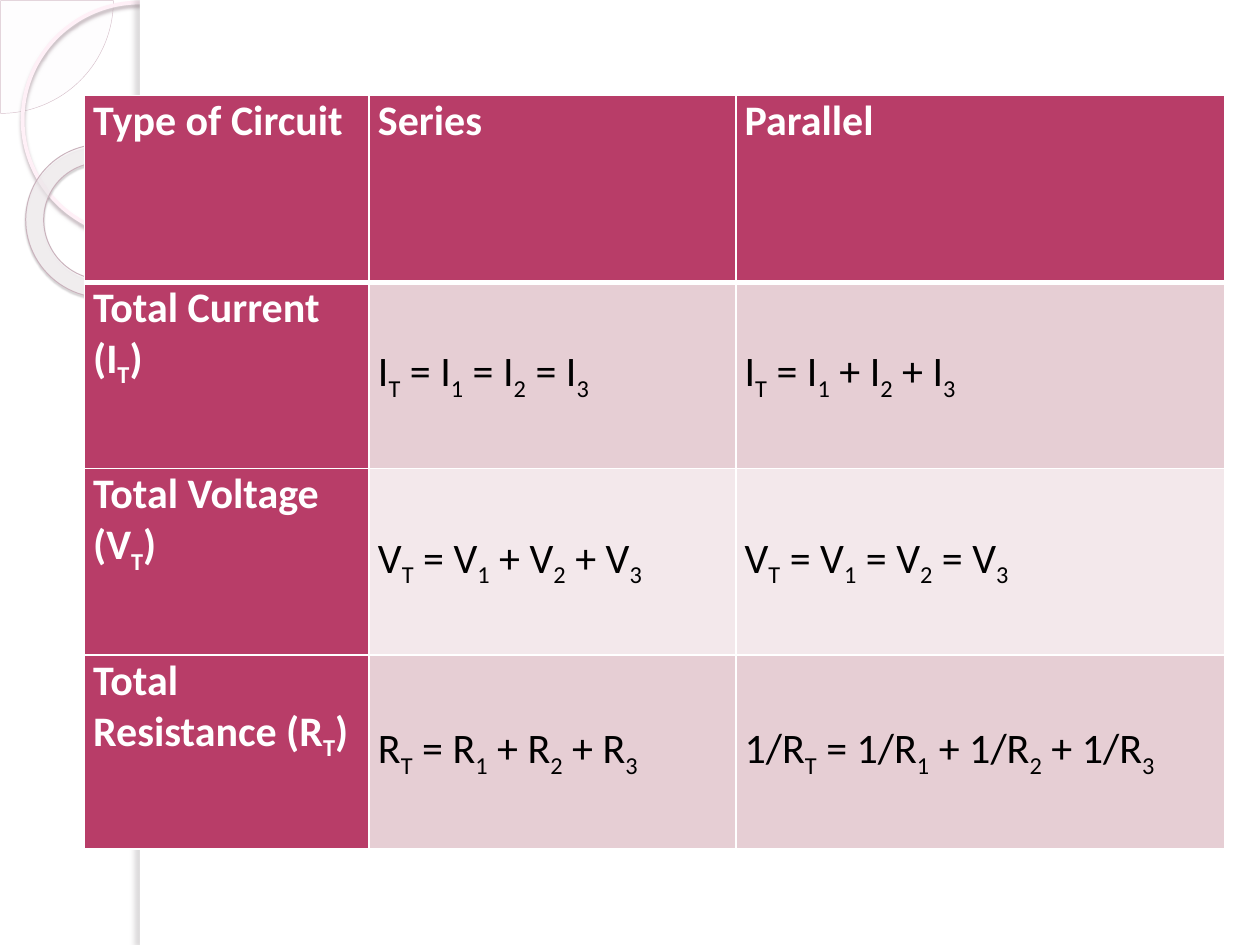
from lxml import etree
from pptx import Presentation
from pptx import util as u
from pptx.dml.color import RGBColor
from pptx.enum import shapes, text
from pptx.oxml.ns import qn

COLORS = {
    "white": "FFFFFF", "black": "000000", "berry": "B83D68",
    "rose": "E6CED4", "blush": "F3E8EB", "petal": "FEFAFC",
    "pie edge": "D7C0CB", "ring edge": "FFF0F7", "donut edge": "CAB3BD",
    "ring shade": "B7A8AF", "donut shade": "5C5257", "panel shade": "7A7276",
}
SLIDE_W, SLIDE_H = 10, 7.5
PANEL_LEFT = 1.11

# An underscore lowers the one character after it.
CIRCUITS = [
    ("Type of Circuit", "Series", "Parallel"),
    ("Total Current (I_T)", "I_T = I_1 = I_2 = I_3", "I_T = I_1 + I_2 + I_3"),
    ("Total Voltage (V_T)", "V_T = V_1 + V_2 + V_3", "V_T = V_1 = V_2 = V_3"),
    ("Total Resistance (R_T)", "R_T = R_1 + R_2 + R_3",
     "1/R_T = 1/R_1 + 1/R_2 + 1/R_3"),
]
TABLE_LEFT, TABLE_TOP = 0.67, 0.76
COL_WIDTHS = (2.26, 2.91, 3.88)
ROW_HEIGHTS = (1.48, 1.48, 1.48, 1.54)

KIND = shapes.MSO_SHAPE
# shadow: colour, opacity %, blur pt, distance pt, direction in degrees
DECORATIONS = [
    dict(kind=KIND.PIE, box=(-0.89, -0.89, 1.79, 1.79), adjust=(0, 54),
         fill="petal", opacity=33, line=("pie edge", 0.25)),
    dict(kind=KIND.OVAL, box=(0.18, 0.02, 1.86, 1.86),
         line=("ring edge", 2.15), shadow=("ring shade", 85, 2, 2, 90)),
    dict(kind=KIND.DONUT, box=(0.2, 1.15, 1.23, 1.21), adjust=(0.118,),
         turn=38.6, fill="petal", opacity=60, line=("donut edge", 0.58),
         shadow=("donut shade", 35, 1, 1.2, 75)),
    dict(kind=KIND.RECTANGLE, fill="white",
         box=(PANEL_LEFT, 0, SLIDE_W - PANEL_LEFT, SLIDE_H)),
    dict(kind=KIND.RECTANGLE, fill="white", box=(PANEL_LEFT, 0, 0.08, SLIDE_H),
         shadow=("panel shade", 25, 3, 3, 180)),
]


def rgb(name):
    return RGBColor.from_string(COLORS[name])


def set_opacity(color, percent):
    etree.SubElement(color, qn("a:alpha"), val=str(round(percent * 1000)))


def cast_shadow(shape, color, opacity, blur, distance, direction):
    effects = shape._element.spPr.find(qn("a:effectLst"))
    outer = etree.SubElement(
        effects, qn("a:outerShdw"), blurRad=str(u.Pt(blur)),
        dist=str(u.Pt(distance)), dir=str(direction * 60000),
        algn="tl", rotWithShape="0")
    set_opacity(etree.SubElement(outer, qn("a:srgbClr"), val=COLORS[color]), opacity)


def add_decoration(slide, kind, box, adjust=(), turn=0, fill=None,
                   opacity=100, line=None, shadow=None):
    shape = slide.shapes.add_shape(kind, *map(u.Inches, box))
    shape.rotation = turn
    for i, value in enumerate(adjust):
        shape.adjustments[i] = value
    if fill:
        shape.fill.solid()
        shape.fill.fore_color.rgb = rgb(fill)
        if opacity < 100:
            set_opacity(shape._element.spPr.find(
                f"{qn('a:solidFill')}/{qn('a:srgbClr')}"), opacity)
    else:
        shape.fill.background()
    if line:
        shape.line.color.rgb = rgb(line[0])
        shape.line.width = u.Pt(line[1])
    else:
        shape.line.fill.background()
    shape.shadow.inherit = False
    if shadow:
        cast_shadow(shape, *shadow)


def set_borders(cell, **widths):
    """Draw white borders; widths are points by side: L, R, T, B."""
    props = cell._tc.get_or_add_tcPr()
    for side, width in widths.items():
        border = etree.SubElement(props, qn(f"a:ln{side}"), w=str(u.Pt(width)))
        solid = etree.SubElement(border, qn("a:solidFill"))
        etree.SubElement(solid, qn("a:srgbClr"), val=COLORS["white"])


def write_formula(paragraph, formula, color, bold):
    def add_run(words, lowered=False):
        run = paragraph.add_run()
        run.text = words
        run.font.name, run.font.size = "Calibri", u.Pt(24)
        run.font.bold = bold
        run.font.color.rgb = rgb(color)
        if lowered:
            run._r.get_or_add_rPr().set("baseline", "-25000")

    start, *rest = formula.split("_")
    add_run(start)
    for part in rest:
        add_run(part[0], lowered=True)
        if part[1:]:
            add_run(part[1:])


def add_circuit_table(slide):
    frame = slide.shapes.add_table(
        len(ROW_HEIGHTS), len(COL_WIDTHS), u.Inches(TABLE_LEFT), u.Inches(TABLE_TOP),
        u.Inches(sum(COL_WIDTHS)), u.Inches(sum(ROW_HEIGHTS)))
    table = frame.table
    for column, width in zip(table.columns, COL_WIDTHS):
        column.width = u.Inches(width)
    for row, height in zip(table.rows, ROW_HEIGHTS):
        row.height = u.Inches(height)
    for r, formulas in enumerate(CIRCUITS):
        for c, formula in enumerate(formulas):
            cell = table.cell(r, c)
            heading = r == 0 or c == 0
            cell.margin_left = cell.margin_right = u.Inches(0.07)
            cell.margin_top = cell.margin_bottom = 0
            cell.vertical_anchor = (text.MSO_ANCHOR.TOP if heading
                                    else text.MSO_ANCHOR.MIDDLE)
            set_borders(cell, L=1, R=1, T=3 if r == 1 else 1, B=3 if r == 0 else 1)
            cell.fill.solid()
            band = "rose" if r % 2 else "blush"
            cell.fill.fore_color.rgb = rgb("berry" if heading else band)
            write_formula(cell.text_frame.paragraphs[0], formula,
                          "white" if heading else "black", heading)


def main():
    deck = Presentation()
    deck.slide_width, deck.slide_height = u.Inches(SLIDE_W), u.Inches(SLIDE_H)
    slide = deck.slides.add_slide(deck.slide_layouts[6])
    for decoration in DECORATIONS:
        add_decoration(slide, **decoration)
    add_circuit_table(slide)
    deck.save("out.pptx")


if __name__ == "__main__":
    main()
